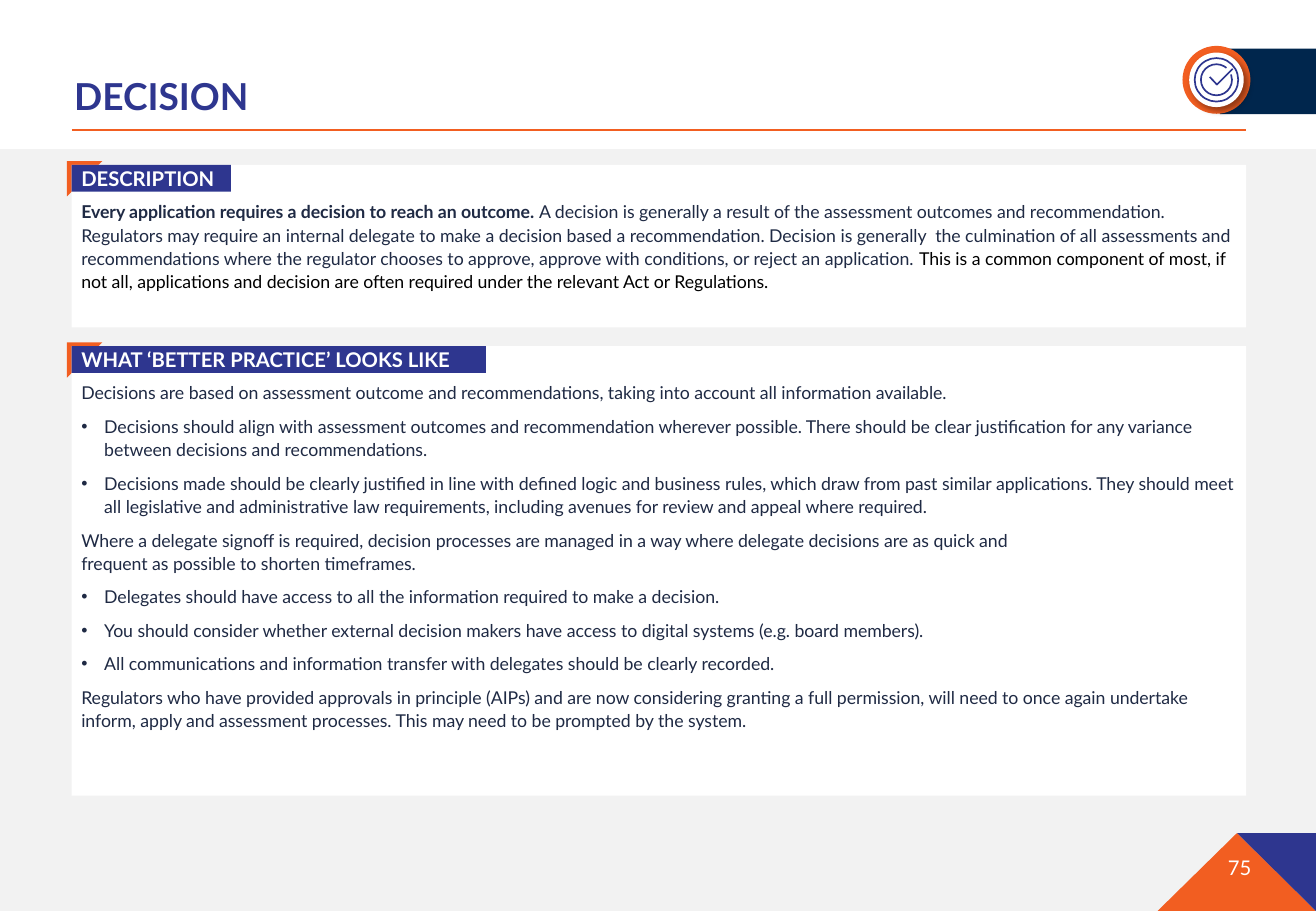
from dataclasses import dataclass

from lxml.etree import SubElement
from pptx import Presentation
from pptx.dml.color import RGBColor
from pptx.enum.shapes import MSO_CONNECTOR, MSO_SHAPE as Preset
from pptx.enum.text import MSO_ANCHOR as Anchor, MSO_AUTO_SIZE, PP_ALIGN as Align
from pptx.oxml.ns import qn
from pptx.util import Cm, Pt

ORANGE, BLUE, NAVY = "F25E21", "2E368F", "00264D"
WHITE, GREY, BLACK, INK = "FFFFFF", "F2F2F2", "000000", "1F2A44"
WIDTH, HEIGHT = 27.51, 19.05
LEFT, PANEL_WIDTH = 1.5, 24.55
ICON_X, ICON_Y = 25.43, 1.67


@dataclass
class Span:
    text: str
    size: float = 10.5
    color: str = INK
    bold: bool = False


@dataclass
class Para:
    spans: list[Span]
    bullet: bool = False


@dataclass
class Panel:
    heading: str
    top: float
    height: float
    tag_width: float
    paras: list[Para]


def plain(text: str) -> Para:
    return Para([Span(text)])


def bullet(text: str) -> Para:
    return Para([Span(text)], bullet=True)


PANELS = [
    Panel("DESCRIPTION", 3.45, 3.4, 3.33, [Para([
        Span("Every application requires a decision to reach an outcome. ", bold=True),
        Span("A decision is generally a result of the assessment outcomes and recommendation. "
             "Regulators may require an internal delegate to make a decision based a "
             "recommendation. Decision is generally  the culmination of all assessments and "
             "recommendations where the regulator chooses to approve, approve with conditions, "
             "or reject an application. "),
        Span("This is a common component of most, if not all, applications and decision are "
             "often required under the relevant Act or Regulations.", color=BLACK),
    ])]),
    Panel("WHAT ‘BETTER PRACTICE’ LOOKS LIKE", 7.24, 9.4, 8.66, [
        plain("Decisions are based on assessment outcome and recommendations, taking into "
              "account all information available."),
        bullet("Decisions should align with assessment outcomes and recommendation wherever "
               "possible. There should be clear justification for any variance between "
               "decisions and recommendations."),
        bullet("Decisions made should be clearly justified in line with defined logic and "
               "business rules, which draw from past similar applications. They should meet "
               "all legislative and administrative law requirements, including avenues for "
               "review and appeal where required."),
        plain("Where a delegate signoff is required, decision processes are managed in a way "
              "where delegate decisions are as quick and \n"
              "frequent as possible to shorten timeframes."),
        bullet("Delegates should have access to all the information required to make a decision."),
        bullet("You should consider whether external decision makers have access to digital "
               "systems (e.g. board members)."),
        bullet("All communications and information transfer with delegates should be clearly "
               "recorded."),
        plain("Regulators who have provided approvals in principle (AIPs) and are now "
              "considering granting a full permission, will need to once again undertake "
              "inform, apply and assessment processes. This may need to be prompted by the "
              "system."),
    ]),
]


def rgb(color: str) -> RGBColor:
    return RGBColor.from_string(color)


def set_all(target, values: dict) -> None:
    for name, value in values.items():
        setattr(target, name, value)


def paint(shape, fill: str = "", line: str = "", weight: float = 1) -> None:
    shape.shadow.inherit = False
    if fill:
        shape.fill.solid()
        shape.fill.fore_color.rgb = rgb(fill)
    else:
        shape.fill.background()
    if line:
        shape.line.color.rgb = rgb(line)
        shape.line.width = Pt(weight)
    else:
        shape.line.fill.background()


def add_preset(page, preset, left: float, top: float, width: float, height: float, **look):
    shape = page.shapes.add_shape(preset, Cm(left), Cm(top), Cm(width), Cm(height))
    paint(shape, **look)
    return shape


def add_round(page, diameter: float, preset=Preset.OVAL, **look):
    """Add a circle or arc centred on the icon."""
    radius = diameter / 2
    return add_preset(page, preset, ICON_X - radius, ICON_Y - radius, diameter, diameter, **look)


def add_outline(page, points: list[tuple[float, float]], close: bool, **look) -> None:
    start, *rest = [(Cm(x), Cm(y)) for x, y in points]
    builder = page.shapes.build_freeform(*start)
    builder.add_line_segments(rest, close=close)
    paint(builder.convert_to_shape(), **look)


def write(shape, paras: list[Para], anchor=Anchor.TOP, align=Align.LEFT,
          insets: tuple = (0.2, 0.13, 0.2, 0.13), **spacing) -> None:
    frame = shape.text_frame
    sides = ("margin_left", "margin_top", "margin_right", "margin_bottom")
    set_all(frame, {"word_wrap": True, "auto_size": MSO_AUTO_SIZE.NONE,
                    "vertical_anchor": anchor, **dict(zip(sides, map(Cm, insets)))})
    for index, item in enumerate(paras):
        para = frame.add_paragraph() if index else frame.paragraphs[0]
        if item.bullet:
            props = para._p.get_or_add_pPr()
            props.set("marL", str(Cm(0.48)))
            props.set("indent", str(Cm(-0.48)))
            SubElement(props, qn("a:buFont"), typeface="Arial")
            SubElement(props, qn("a:buChar"), char="•")
        set_all(para, {"alignment": align, "space_before": Pt(6 if index else 0), **spacing})
        for span in item.spans:
            for number, line in enumerate(span.text.split("\n")):
                if number:
                    para.add_line_break()
                run = para.add_run()
                run.text = line
                set_all(run.font, {"name": "Lato", "size": Pt(span.size), "bold": span.bold})
                run.font.color.rgb = rgb(span.color)


def add_shadow(shape) -> None:
    effects = shape._element.spPr.find(qn("a:effectLst"))
    shadow = SubElement(effects, qn("a:outerShdw"), blurRad=str(Pt(4)), dist=str(Pt(3)),
                        dir="2700000", algn="tl", rotWithShape="0")
    color = SubElement(shadow, qn("a:srgbClr"), val=BLACK)
    SubElement(color, qn("a:alpha"), val="40000")


def add_title(page) -> None:
    title = page.shapes.title
    set_all(title, {"left": Cm(1.55), "top": Cm(1.57), "width": Cm(24.51), "height": Cm(1.45)})
    write(title, [Para([Span("DECISION", 22, BLUE, True)])], insets=(0, 0.08, 0, 0.13),
          line_spacing=0.9)
    rule = page.shapes.add_connector(MSO_CONNECTOR.STRAIGHT, Cm(LEFT), Cm(2.72),
                                     Cm(LEFT + PANEL_WIDTH), Cm(2.72))
    rule.line.color.rgb = rgb(ORANGE)
    rule.line.width = Pt(1.25)
    SubElement(rule._element.spPr, qn("a:effectLst"))


def add_icon(page) -> None:
    add_preset(page, Preset.RECTANGLE, 25.5, 1.02, WIDTH - 25.5, 1.37, fill=NAVY)
    add_round(page, 1.42, fill=ORANGE)
    add_shadow(add_round(page, 1.14, fill=WHITE))
    add_round(page, 0.91, line=BLUE)
    ring = add_round(page, 0.65, Preset.ARC, line=BLUE)
    for index, degrees in enumerate((340, 310)):
        ring.adjustments[index] = degrees * 0.6
    add_outline(page, [(25.29, 1.61), (25.44, 1.77), (25.77, 1.44)], False, line=BLUE)


def add_corner(page) -> None:
    start, middle, top = 24.2, 25.86, 17.42
    add_outline(page, [(middle, top), (start, HEIGHT), (WIDTH, HEIGHT)], True, fill=ORANGE)
    add_outline(page, [(WIDTH, top), (middle, top), (WIDTH, HEIGHT)], True, fill=BLUE)
    number = page.shapes.add_textbox(Cm(23.95), Cm(17.75), Cm(2.21), Cm(0.76))
    write(number, [Para([Span("75", 12, WHITE)])], align=Align.RIGHT, insets=(0, 0.13, 0, 0.13))


def add_panel(page, panel: Panel) -> None:
    corner = add_preset(page, Preset.HALF_FRAME, LEFT - 0.1, panel.top - 0.08, 0.74, 0.74,
                        fill=ORANGE)
    for index in range(2):
        corner.adjustments[index] = 0.24
    body = add_preset(page, Preset.RECTANGLE, LEFT, panel.top, PANEL_WIDTH, panel.height,
                      fill=WHITE)
    write(body, panel.paras, insets=(0.2, 0.71, 0.2, 0.2), line_spacing=1.1)
    tag = add_preset(page, Preset.RECTANGLE, LEFT, panel.top, panel.tag_width, 0.56, fill=BLUE)
    write(tag, [Para([Span(panel.heading, 12, WHITE, True)])], anchor=Anchor.MIDDLE)


def main() -> None:
    deck = Presentation()
    set_all(deck, {"slide_width": Cm(WIDTH), "slide_height": Cm(HEIGHT)})
    page = deck.slides.add_slide(deck.slide_layouts[5])
    add_preset(page, Preset.RECTANGLE, 0, 3.12, WIDTH, HEIGHT - 3.12, fill=GREY)
    add_title(page)
    add_corner(page)
    add_icon(page)
    for panel in PANELS:
        add_panel(page, panel)
    deck.save("out.pptx")


if __name__ == "__main__":
    main()
